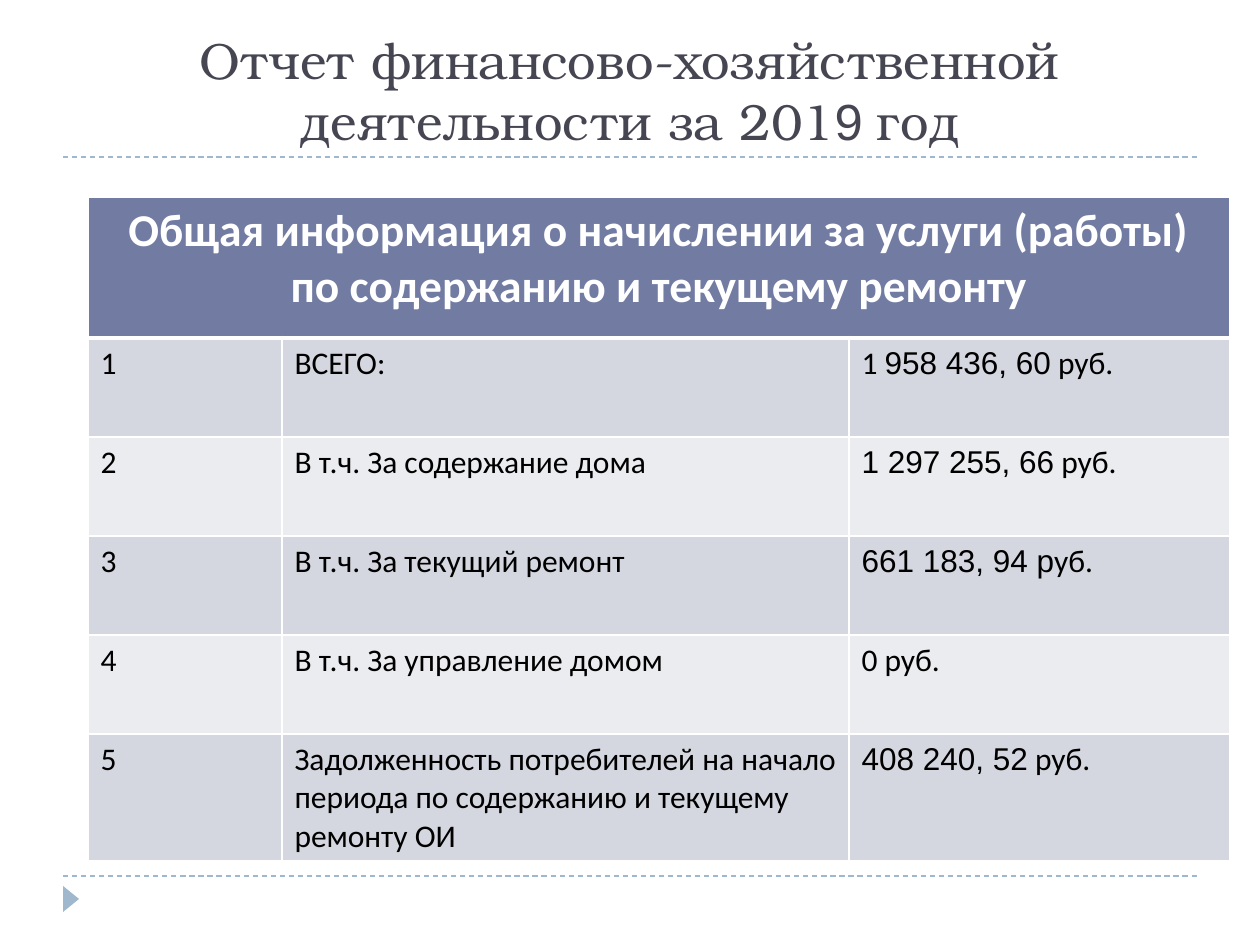
from lxml import etree
from pptx import Presentation
from pptx.dml.color import RGBColor
from pptx.enum.dml import MSO_LINE_DASH_STYLE as Dash
from pptx.enum.shapes import MSO_CONNECTOR as Connector, MSO_SHAPE as Shape
from pptx.enum.text import MSO_ANCHOR as Anchor, PP_ALIGN as Align
from pptx.oxml.ns import qn
from pptx.util import Pt

SLATE = RGBColor(0x46, 0x46, 0x53)
SKY = RGBColor(0x9F, 0xB8, 0xCD)
INDIGO = RGBColor(0x72, 0x7C, 0xA3)
BANDS = RGBColor(0xD5, 0xD7, 0xE0), RGBColor(0xEB, 0xEC, 0xF0)
WHITE = RGBColor(0xFF, 0xFF, 0xFF)
BLACK = RGBColor(0, 0, 0)

SERIF, SANS, BODY = "TeX Gyre Bonum", "Arial", "Calibri"
TITLE = [
    ("Отчет финансово-хозяйственной деятельности за 201", SERIF),
    ("9 ", SANS),
    ("год", SERIF),
]
HEADING = [("Общая информация о начислении за услуги (работы) по содержанию и текущему ремонту", BODY)]
CHARGES = [
    ("ВСЕГО:", [("1 ", BODY), ("958 436, 60", SANS), (" руб.", BODY)]),
    ("В т.ч. За содержание дома", [("1 297 255, 66", SANS), (" руб.", BODY)]),
    ("В т.ч. За текущий ремонт", [("661 183, 94 р", SANS), ("уб.", BODY)]),
    ("В т.ч. За управление домом", [("0 руб.", BODY)]),
    (
        "Задолженность потребителей на начало периода по содержанию и текущему ремонту ОИ",
        [("408 240, 52", SANS), (" руб.", BODY)],
    ),
]
TITLE_FORMAT = {"size": Pt(29), "bold": False}
HEADING_FORMAT = {"size": Pt(26), "bold": True}
CELL_FORMAT = {"size": Pt(18), "bold": False}

COLUMN_WIDTHS = [194, 567, 381]
ROW_HEIGHTS = [141, 99, 99, 99, 99, 127]
TABLE_LEFT, TABLE_TOP = 88, 197
RULE_LEFT, RULE_RIGHT = 63, 1197
RULE_TOPS = [157, 876]


def px(length):
    """Turn pixels into EMU."""
    return round(length * 914400 / 126)


def write(frame, pieces, style, color, align=Align.LEFT):
    """Write font-tagged pieces into one paragraph."""
    paragraph = frame.paragraphs[0]
    paragraph.alignment = align
    for wording, face in pieces:
        run = paragraph.add_run()
        run.text = wording
        run.font.color.rgb = color
        for key, value in {**style, "name": face}.items():
            setattr(run.font, key, value)


def fill_cell(cell, color, top=1, bottom=1):
    """Paint a cell and its white borders."""
    cell.fill.solid()
    cell.fill.fore_color.rgb = color
    properties = cell._tc.get_or_add_tcPr()
    edges = {"L": 1, "R": 1, "T": top, "B": bottom}
    for index, (side, weight) in enumerate(edges.items()):
        border = etree.Element(qn(f"a:ln{side}"), w=str(Pt(weight)))
        solid = etree.SubElement(border, qn("a:solidFill"))
        etree.SubElement(solid, qn("a:srgbClr"), val=str(WHITE))
        properties.insert(index, border)


def add_decor(slide):
    """Draw the dashed rules and the corner marker."""
    for top in RULE_TOPS:
        rule = slide.shapes.add_connector(
            Connector.STRAIGHT, px(RULE_LEFT), px(top), px(RULE_RIGHT), px(top)
        )
        rule.line.color.rgb = SKY
        rule.line.width = Pt(0.75)
        rule.line.dash_style = Dash.DASH
        etree.SubElement(rule._element.spPr, qn("a:effectLst"))
    marker = slide.shapes.add_shape(Shape.ISOSCELES_TRIANGLE, px(58), px(891), px(26), px(16))
    marker.rotation = 90
    marker.shadow.inherit = False
    marker.fill.solid()
    marker.fill.fore_color.rgb = SKY
    marker.line.fill.background()


def add_title(slide):
    """Place the title above the upper rule."""
    frame = slide.shapes.add_textbox(px(63), px(31), px(1134), px(126)).text_frame
    frame.word_wrap = True
    frame.vertical_anchor = Anchor.BOTTOM
    write(frame, TITLE, TITLE_FORMAT, SLATE, Align.CENTER)


def add_charges(slide):
    """Build the table of charges."""
    table = slide.shapes.add_table(
        len(ROW_HEIGHTS), len(COLUMN_WIDTHS), px(TABLE_LEFT), px(TABLE_TOP),
        px(sum(COLUMN_WIDTHS)), px(sum(ROW_HEIGHTS)),
    ).table
    for column, width in zip(table.columns, COLUMN_WIDTHS):
        column.width = px(width)
    for row, height in zip(table.rows, ROW_HEIGHTS):
        row.height = px(height)

    heading = table.cell(0, 0)
    heading.merge(table.cell(0, len(COLUMN_WIDTHS) - 1))
    for cell in table.rows[0].cells:
        fill_cell(cell, INDIGO, bottom=3)
    write(heading.text_frame, HEADING, HEADING_FORMAT, WHITE, Align.CENTER)

    for number, (service, amount) in enumerate(CHARGES, 1):
        entries = [(str(number), BODY)], [(service, BODY)], amount
        for cell, pieces in zip(table.rows[number].cells, entries):
            fill_cell(cell, BANDS[(number - 1) % 2], top=3 if number == 1 else 1)
            write(cell.text_frame, pieces, CELL_FORMAT, BLACK)


def main():
    """Build the financial report slide."""
    deck = Presentation()
    deck.slide_width, deck.slide_height = px(1260), px(945)
    slide = deck.slides.add_slide(deck.slide_layouts[6])
    add_decor(slide)
    add_title(slide)
    add_charges(slide)
    deck.save("out.pptx")


if __name__ == "__main__":
    main()
